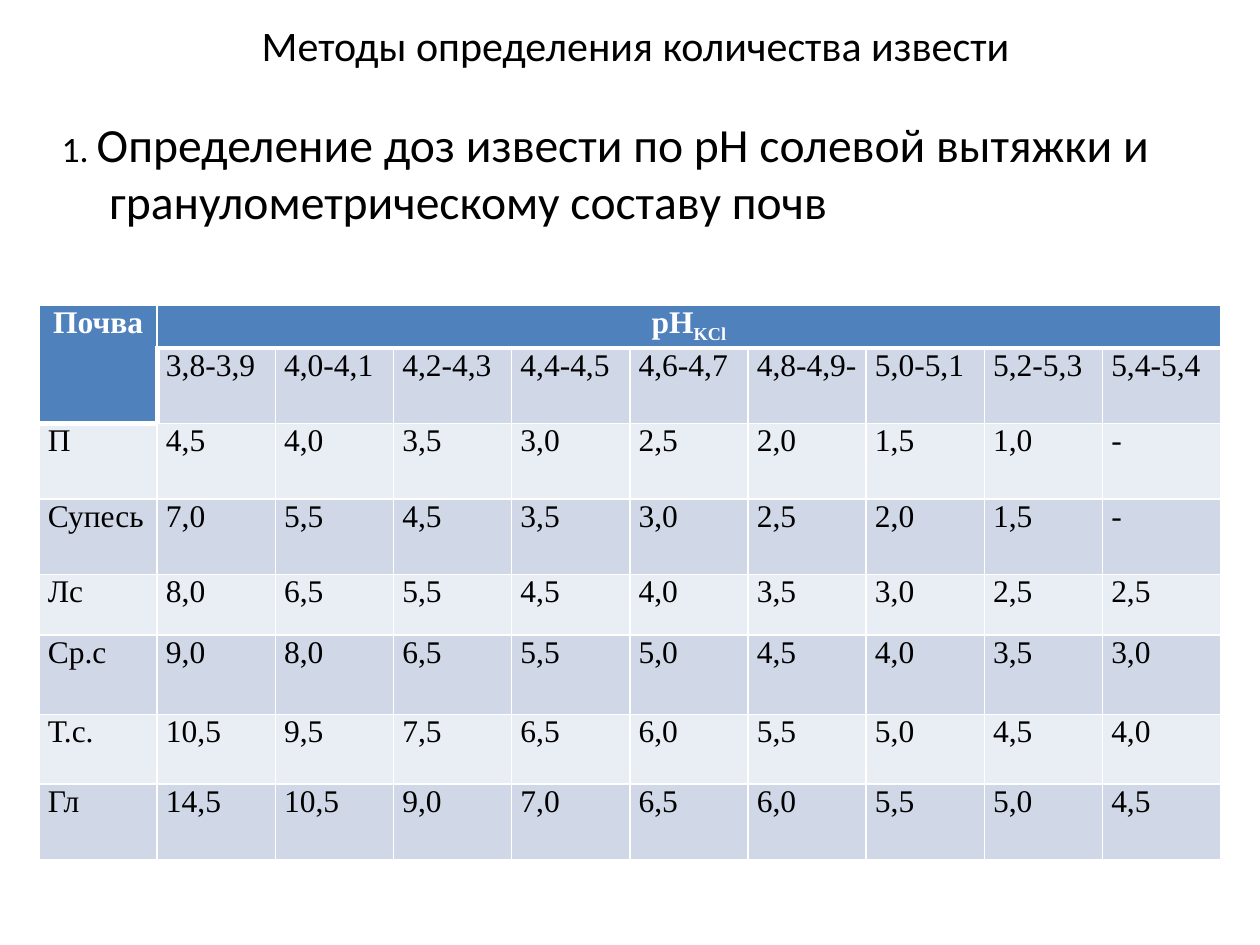
"""Build a slide with a table of lime doses by soil type and pH."""
import pptx
import pptx.dml.color
import pptx.enum.text
import pptx.oxml
import pptx.oxml.ns
import pptx.util
from dataclasses import dataclass

Inches = pptx.util.Inches
Align = pptx.enum.text.PP_ALIGN
Anchor = pptx.enum.text.MSO_ANCHOR


@dataclass(frozen=True)
class Theme:
    black: str = "000000"
    white: str = "FFFFFF"
    header: str = "4F81BD"
    dark_band: str = "D0D8E8"
    light_band: str = "E9EDF4"
    heading_font: str = "Calibri"
    table_font: str = "Times New Roman"
    title_size: float = 24
    number_size: float = 20.4
    method_size: float = 27.2
    table_size: float = 18
    thin: float = 1
    thick: float = 3


theme = Theme()


def write(paragraph, text, *, size, font, color=theme.black, bold=False, align=Align.LEFT, baseline=0):
    paragraph.alignment = align
    run = paragraph.add_run()
    run.text = text
    run.font.size = pptx.util.Pt(size)
    run.font.name = font
    run.font.bold = bold
    run.font.color.rgb = pptx.dml.color.RGBColor.from_string(color)
    if baseline:
        run._r.get_or_add_rPr().set("baseline", str(baseline * 1000))


def style_cell(cell, fill, **widths):
    cell.margin_left = cell.margin_right = Inches(0.07)
    cell.margin_top = cell.margin_bottom = 0
    properties = cell._tc.get_or_add_tcPr()
    for side in "LRTB":
        width = pptx.util.Pt(widths.get(side, theme.thin))
        properties.append(pptx.oxml.parse_xml(
            f'<a:ln{side} {pptx.oxml.ns.nsdecls("a")} w="{width}"><a:solidFill>'
            f'<a:srgbClr val="{theme.white}"/></a:solidFill></a:ln{side}>'))
    cell.fill.solid()
    cell.fill.fore_color.rgb = pptx.dml.color.RGBColor.from_string(fill)


presentation = pptx.Presentation()
presentation.slide_width = Inches(10)
presentation.slide_height = Inches(7.5)
slide = presentation.slides.add_slide(presentation.slide_layouts[6])

title = slide.shapes.add_textbox(Inches(0.16), Inches(0.08), Inches(9.77), Inches(0.55))
title.text_frame.word_wrap = True
title.text_frame.vertical_anchor = Anchor.MIDDLE
write(title.text_frame.paragraphs[0], "Методы определения количества извести",
      size=theme.title_size, font=theme.heading_font, align=Align.CENTER)

method = slide.shapes.add_textbox(Inches(0.39), Inches(0.86), Inches(9.19), Inches(0.83))
method.text_frame.word_wrap = True
paragraph = method.text_frame.paragraphs[0]
paragraph.space_before = pptx.util.Pt(2)
indent = paragraph._p.get_or_add_pPr()
indent.set("marL", str(Inches(0.38)))
indent.set("indent", str(Inches(-0.38)))
write(paragraph, "1. ", size=theme.number_size, font=theme.heading_font)
write(paragraph, "Определение доз извести по pH солевой вытяжки и гранулометрическому составу почв",
      size=theme.method_size, font=theme.heading_font)

row_heights = [0.3, 0.6, 0.6, 0.6, 0.48, 0.63, 0.55, 0.6]
rows = [
    ["Почва", "pH", "", "", "", "", "", "", "", ""],
    ["", "3,8-3,9", "4,0-4,1", "4,2-4,3", "4,4-4,5", "4,6-4,7", "4,8-4,9-", "5,0-5,1", "5,2-5,3", "5,4-5,4"],
    ["П", "4,5", "4,0", "3,5", "3,0", "2,5", "2,0", "1,5", "1,0", "-"],
    ["Супесь", "7,0", "5,5", "4,5", "3,5", "3,0", "2,5", "2,0", "1,5", "-"],
    ["Лс", "8,0", "6,5", "5,5", "4,5", "4,0", "3,5", "3,0", "2,5", "2,5"],
    ["Ср.с", "9,0", "8,0", "6,5", "5,5", "5,0", "4,5", "4,0", "3,5", "3,0"],
    ["Т.с.", "10,5", "9,5", "7,5", "6,5", "6,0", "5,5", "5,0", "4,5", "4,0"],
    ["Гл", "14,5", "10,5", "9,0", "7,0", "6,5", "6,0", "5,5", "5,0", "4,5"],
]
table = slide.shapes.add_table(len(rows), len(rows[0]), Inches(0.31), Inches(2.42),
                               Inches(9.38), Inches(sum(row_heights))).table
for row, height in zip(table.rows, row_heights):
    row.height = Inches(height)
table.cell(0, 0).merge(table.cell(1, 0))
table.cell(0, 1).merge(table.cell(0, 9))

for row_index, values in enumerate(rows):
    for column_index, value in enumerate(values):
        cell = table.cell(row_index, column_index)
        is_header = row_index == 0 or (row_index == 1 and column_index == 0)
        widths = {}
        if row_index == 0 or is_header:
            widths["B"] = theme.thick
        if row_index == 1 and column_index > 0 or row_index == 2 and column_index == 0:
            widths["T"] = theme.thick
        if row_index == 1 and column_index < 2:
            widths["R" if column_index == 0 else "L"] = theme.thick
        band = theme.dark_band if row_index % 2 else theme.light_band
        style_cell(cell, theme.header if is_header else band, **widths)
        if value:
            write(cell.text_frame.paragraphs[0], value, size=theme.table_size, font=theme.table_font,
                  color=theme.white if is_header else theme.black, bold=is_header,
                  align=Align.CENTER if is_header else Align.JUSTIFY)

write(table.cell(0, 1).text_frame.paragraphs[0], "KCl", size=theme.table_size, font=theme.table_font,
      color=theme.white, bold=True, align=Align.CENTER, baseline=-25)

presentation.save("out.pptx")
